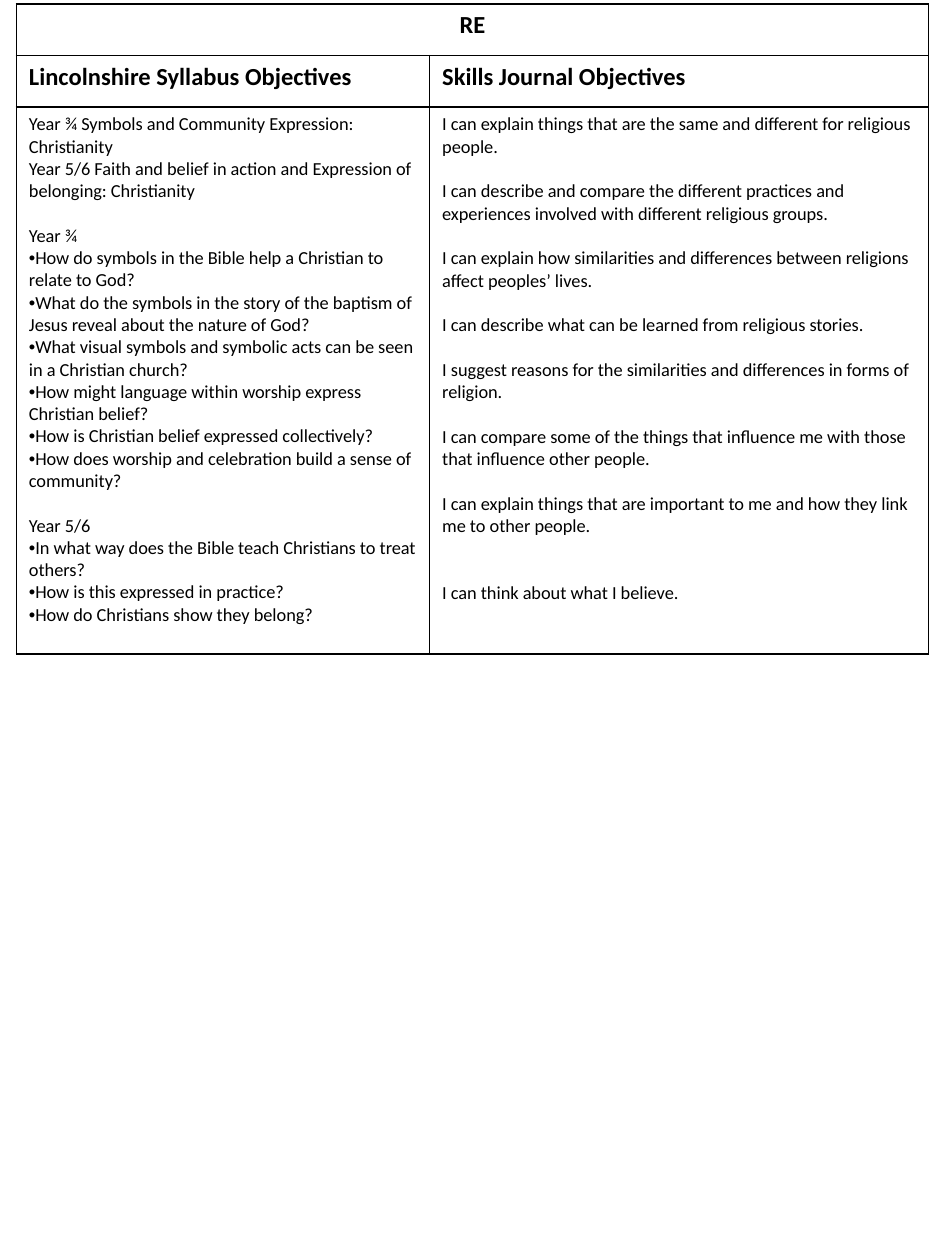
from dataclasses import dataclass

from lxml.etree import SubElement
from pptx import Presentation
from pptx.dml.color import RGBColor
from pptx.enum.text import PP_ALIGN
from pptx.oxml.ns import qn
from pptx.table import _Cell
from pptx.util import Cm, Pt

FONT = "Calibri"
BLACK = "000000"
BODY_SIZE = 10.5
BODY_LINE = 12.8  # height of one line of body text, in points
COLUMN_WIDTHS = (8.33, 10.06)
ROW_HEIGHTS = (1.04, 1.04, 11.02)


@dataclass
class Line:
    text: str
    lines_before: int = 0
    bullet: bool = False


def bullets(*texts: str) -> list[Line]:
    return [Line(text, bullet=True) for text in texts]


SYLLABUS = [
    Line("Year ¾ Symbols and Community Expression: Christianity"),
    Line("Year 5/6 Faith and belief in action and Expression of belonging: Christianity"),
    Line("Year ¾", lines_before=1),
    *bullets(
        "How do symbols in the Bible help a Christian to relate to God?",
        "What do the symbols in the story of the baptism of Jesus reveal about the nature of God?",
        "What visual symbols and symbolic acts can be seen in a Christian church?",
        "How might language within worship express Christian belief?",
        "How is Christian belief expressed collectively?",
        "How does worship and celebration build a sense of community?",
    ),
    Line("Year 5/6", lines_before=1),
    *bullets(
        "In what way does the Bible teach Christians to treat others?",
        "How is this expressed in practice?",
        "How do Christians show they belong?",
    ),
]

SKILLS = [
    Line("I can explain things that are the same and different for religious people."),
    Line("I can describe and compare the different practices and experiences involved "
         "with different religious groups.", 1),
    Line("I can explain how similarities and differences between religions affect "
         "peoples’ lives.", 1),
    Line("I can describe what can be learned from religious stories.", 1),
    Line("I suggest reasons for the similarities and differences in forms of religion.", 1),
    Line("I can compare some of the things that influence me with those that influence "
         "other people.", 1),
    Line("I can explain things that are important to me and how they link me to other people.", 1),
    Line("I can think about what I believe.", 2),
]


def color(value: str) -> RGBColor:
    return RGBColor.from_string(value)


def add_bullet(paragraph) -> None:
    properties = paragraph._p.get_or_add_pPr()
    properties.set("marL", "0")
    properties.set("indent", "0")
    SubElement(properties, qn("a:buFont"), typeface="Arial")
    SubElement(properties, qn("a:buChar"), char="•")


def write(cell: _Cell, lines: list[Line], *, size: float = BODY_SIZE,
          bold: bool = False, align: PP_ALIGN = PP_ALIGN.LEFT) -> None:
    frame = cell.text_frame
    for index, line in enumerate(lines):
        paragraph = frame.add_paragraph() if index else frame.paragraphs[0]
        if line.bullet:
            add_bullet(paragraph)
        paragraph.alignment = align
        if line.lines_before:
            paragraph.space_before = Pt(line.lines_before * BODY_LINE)
        run = paragraph.add_run()
        run.text = line.text
        run.font.name = FONT
        run.font.size = Pt(size)
        run.font.bold = bold
        run.font.color.rgb = color(BLACK)


def style_cell(cell: _Cell) -> None:
    """Clear the fill and draw a thin border on all four sides."""
    properties = cell._tc.get_or_add_tcPr()
    for side in ("lnL", "lnR", "lnT", "lnB"):
        border = SubElement(properties, qn(f"a:{side}"), w=str(Pt(1)))
        fill = SubElement(border, qn("a:solidFill"))
        SubElement(fill, qn("a:srgbClr"), val=BLACK)
    cell.fill.background()


def main() -> None:
    presentation = Presentation()
    presentation.slide_width, presentation.slide_height = Cm(19.05), Cm(25.4)
    slide = presentation.slides.add_slide(presentation.slide_layouts[6])

    table = slide.shapes.add_table(
        len(ROW_HEIGHTS), len(COLUMN_WIDTHS), Cm(0.33), Cm(0.08),
        Cm(sum(COLUMN_WIDTHS)), Cm(sum(ROW_HEIGHTS))).table
    table.first_row = table.horz_banding = False
    for column, width in zip(table.columns, COLUMN_WIDTHS):
        column.width = Cm(width)
    for row, height in zip(table.rows, ROW_HEIGHTS):
        row.height = Cm(height)
    for cell in table.iter_cells():
        style_cell(cell)

    table.cell(0, 0).merge(table.cell(0, 1))
    write(table.cell(0, 0), [Line("RE")], size=14, bold=True, align=PP_ALIGN.CENTER)
    objectives = (("Lincolnshire Syllabus Objectives", SYLLABUS),
                  ("Skills Journal Objectives", SKILLS))
    for index, (heading, lines) in enumerate(objectives):
        write(table.cell(1, index), [Line(heading)], size=14, bold=True)
        write(table.cell(2, index), lines)

    presentation.save("out.pptx")


if __name__ == "__main__":
    main()
